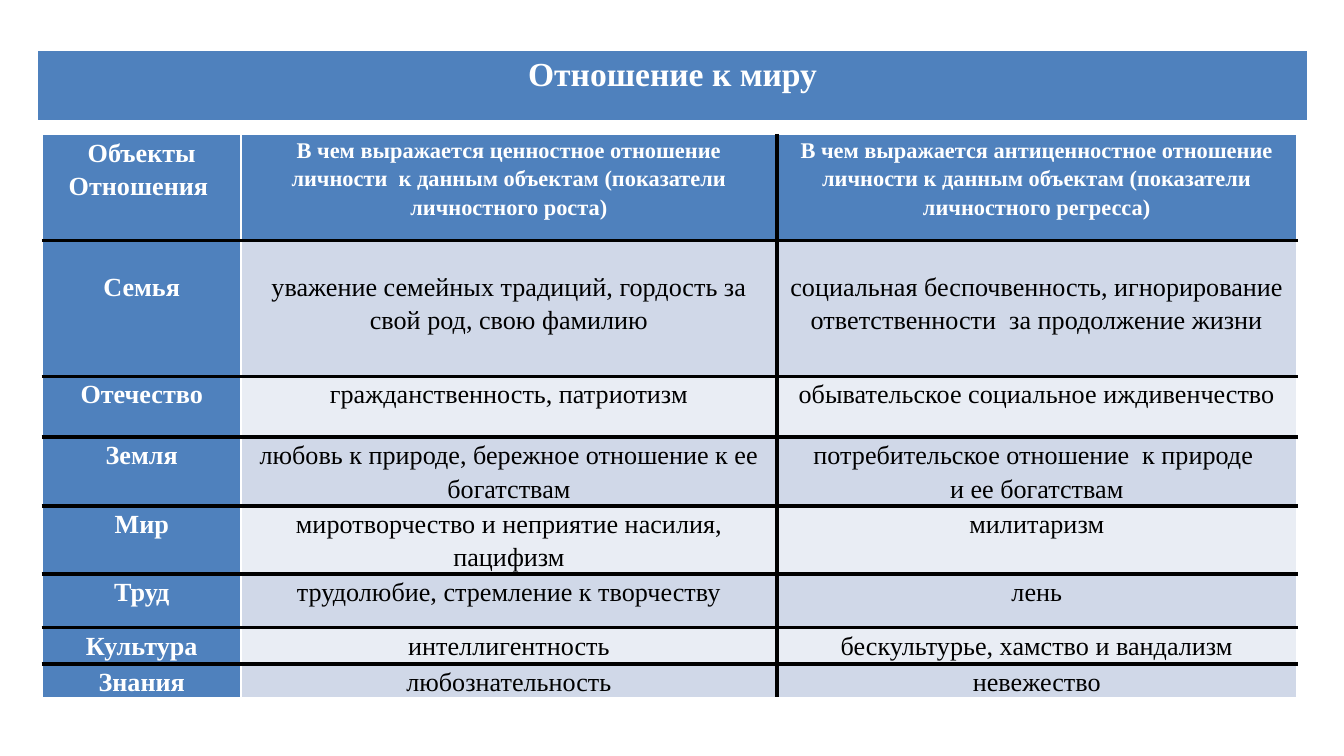
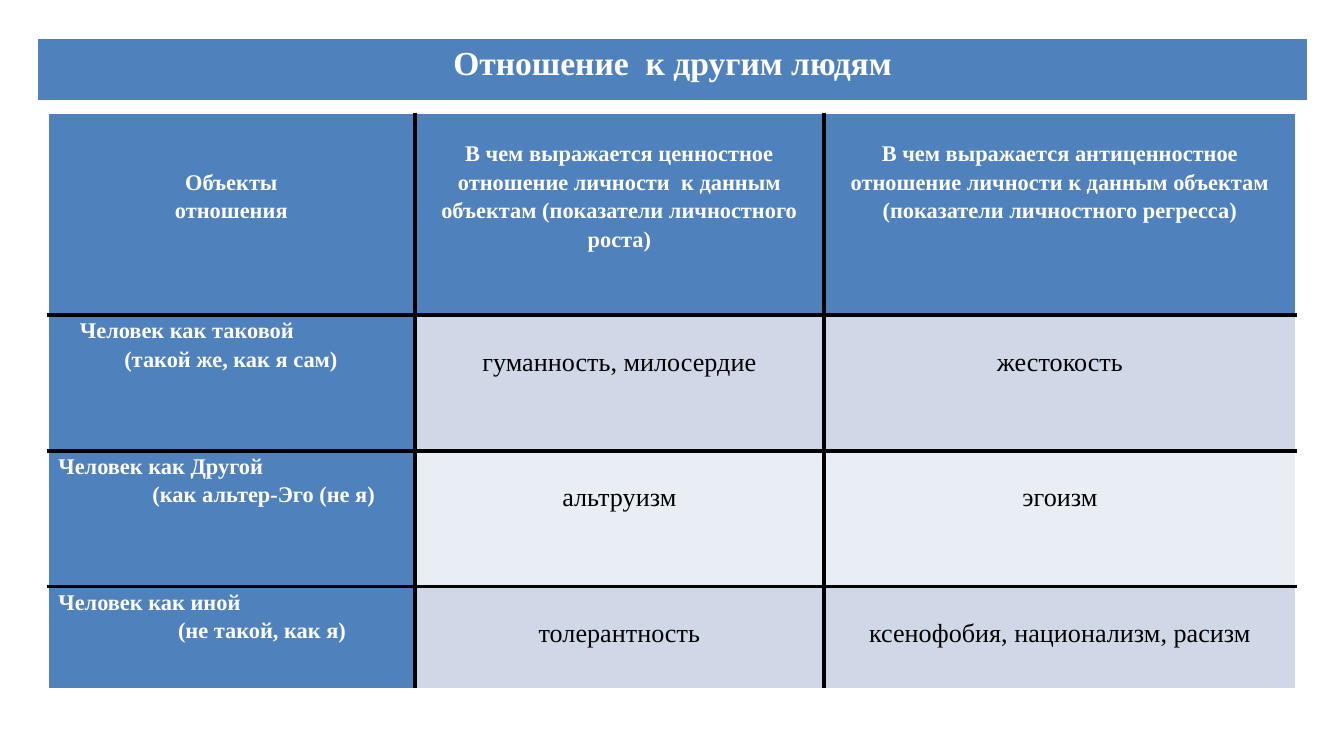
from dataclasses import dataclass

from lxml.etree import SubElement
from pptx import Presentation
from pptx.dml.color import RGBColor
from pptx.enum.text import PP_ALIGN
from pptx.oxml.ns import qn
from pptx.util import Emu, Inches, Pt

# Shared look
WIDTH, HEIGHT = Inches(10), Inches(5.625)
FONT = "Times New Roman"
BLUE, WHITE, BLACK = "4F81BD", "FFFFFF", "000000"
BANDS = ("D0D8E8", "E9EDF4")
THIN, THICK, BASE = (WHITE, 1), (BLACK, 2.25), (WHITE, 3)
SMALL, MEDIUM, LARGE = 12, 14, 18


@dataclass
class Entry:
    """Text of one cell: skip is the number of lines left free above it."""
    lines: tuple
    size: int = MEDIUM
    skip: int = 0
    indents: tuple = ()


def entry(*lines, **options):
    return Entry(lines, **options)


def color(value):
    return RGBColor.from_string(value)


def across(percent):
    return Emu(round(WIDTH * percent / 100))


def down(percent):
    return Emu(round(HEIGHT * percent / 100))


def add_span(para, text, size, ink, bold):
    span = para.add_run()
    span.text = text
    span.font.name = FONT
    span.font.size = Pt(size)
    span.font.bold = bold
    span.font.color.rgb = color(ink)


def fill_back(cell, fill):
    cell.fill.solid()
    cell.fill.fore_color.rgb = color(fill)


def set_borders(cell, **sides):
    """Draw the borders, which come before the fill in the cell properties."""
    properties = cell._tc.get_or_add_tcPr()
    for position, side in enumerate("LRTB"):
        ink, points = sides[side]
        line = SubElement(properties, qn(f"a:ln{side}"), w=str(Pt(points)))
        solid = SubElement(line, qn("a:solidFill"))
        SubElement(solid, qn("a:srgbClr"), val=ink)
        properties.insert(position, line)


def add_grid(page, left, top, columns, rows):
    shape = page.shapes.add_table(len(rows), len(columns), across(left), down(top),
                                  across(sum(columns)), down(sum(rows)))
    table = shape.table
    for column, share in zip(table.columns, columns):
        column.width = across(share)
    for row, share in zip(table.rows, rows):
        row.height = down(share)
    return table


def add_title(page, text, top, height):
    """Blue one-cell table across the page."""
    cell = add_grid(page, 2.8, top, (94.5,), (height,)).cell(0, 0)
    fill_back(cell, BLUE)
    set_borders(cell, L=THIN, R=THIN, T=THIN, B=BASE)
    para = cell.text_frame.paragraphs[0]
    para.alignment = PP_ALIGN.CENTER
    add_span(para, text, LARGE, WHITE, True)


def add_stepped_lines(para, item, ink, bold):
    """Two lines of one paragraph, each with its own indent."""
    first, second = (across(indent) for indent in item.indents)
    para.alignment = PP_ALIGN.LEFT
    properties = para._p.get_or_add_pPr()
    properties.set("marL", str(second))
    properties.set("indent", str(first - second))
    for number, line in enumerate(item.lines):
        if number:
            para.add_line_break()
        add_span(para, line, item.size, ink, bold)


def fill_text(cell, item, ink, bold, side_margin):
    cell.margin_left = cell.margin_right = Inches(side_margin)
    cell.margin_top = Pt(item.size * (1.29 * item.skip - 0.2)) if item.skip else 0
    cell.margin_bottom = 0
    frame = cell.text_frame
    if item.indents:
        frame.paragraphs[0].line_spacing = 1.15
        add_stepped_lines(frame.paragraphs[0], item, ink, bold)
        return
    for number, line in enumerate(item.lines):
        para = frame.add_paragraph() if number else frame.paragraphs[0]
        para.line_spacing = 1.15
        para.alignment = PP_ALIGN.CENTER
        add_span(para, line, item.size, ink, bold)


def add_relation_table(page, left, top, columns, rows, entries, rules, side_margin):
    """Blue head row and first column, banded body; rules are the vertical lines."""
    table = add_grid(page, left, top, columns, rows)
    verticals = (THIN, *rules, THIN)
    horizontals = (THIN, *[THICK] * (len(rows) - 1), THIN)
    for r, items in enumerate(entries):
        for c, item in enumerate(items):
            cell = table.cell(r, c)
            head = r == 0 or c == 0
            fill_back(cell, BLUE if head else BANDS[(r - 1) % 2])
            fill_text(cell, item, WHITE if head else BLACK, head, side_margin)
            set_borders(cell, L=verticals[c], R=verticals[c + 1],
                        T=horizontals[r], B=horizontals[r + 1])


def heads(skip):
    return [
        entry(f"В чем выражается {kind} к данным объектам "
              f"(показатели личностного {result})", size=SMALL, skip=skip)
        for kind, result in (("ценностное отношение личности ", "роста"),
                             ("антиценностное отношение личности", "регресса"))
    ]


def build_world(page):
    family = ("Семья",
              "уважение семейных традиций, гордость за свой род, свою фамилию",
              "социальная беспочвенность, игнорирование ответственности  "
              "за продолжение жизни")
    body = [
        ("Отечество", "гражданственность, патриотизм",
         "обывательское социальное иждивенчество"),
        ("Земля", "любовь к природе, бережное отношение к ее богатствам",
         ("потребительское отношение  к природе ", "и ее богатствам")),
        ("Мир", "миротворчество и неприятие насилия, пацифизм", "милитаризм"),
        ("Труд", "трудолюбие, стремление к творчеству", "лень"),
        ("Культура", "интеллигентность", "бескультурье, хамство и вандализм"),
        ("Знания", "любознательность", "невежество"),
    ]
    entries = [[entry("Объекты", "Отношения "), *heads(skip=0)],
               [entry(text, skip=1) for text in family]]
    for texts in body:
        entries.append([Entry(text if isinstance(text, tuple) else (text,))
                        for text in texts])
    add_relation_table(page, 3.15, 17.8, (14.8, 39.85, 38.7),
                       (14.04, 17.96, 8.05, 9.07, 9.07, 7.05, 4.8, 4.44),
                       entries, (THIN, THICK), 0.04)
    add_title(page, "Отношение к миру", 6.65, 9.6)


def build_people(page):
    body = [
        (("Человек как таковой", "(такой же, как я сам)"), (1.7, 5),
         "гуманность, милосердие", "жестокость"),
        (("Человек как Другой", "(как альтер-Эго (не я)"), (0.1, 7.1),
         "альтруизм", "эгоизм"),
        (("Человек как иной", "(не такой, как я)"), (0.1, 9),
         "толерантность", "ксенофобия, национализм, расизм"),
    ]
    entries = [[entry("Объекты", "отношения", size=SMALL, skip=2), *heads(skip=1)]]
    for lines, indents, *values in body:
        entries.append([Entry(lines, size=SMALL, indents=indents),
                        *[entry(value, skip=1) for value in values]])
    add_relation_table(page, 3.55, 15, (27.33, 30.42, 35.15),
                       (26.67, 17.96, 17.96, 13.51),
                       entries, (THICK, THICK), 0.07)
    add_title(page, "Отношение  к другим людям", 5.1, 8.4)


def main():
    deck = Presentation()
    deck.slide_width, deck.slide_height = WIDTH, HEIGHT
    blank = deck.slide_layouts[6]
    for build in (build_world, build_people):
        build(deck.slides.add_slide(blank))
    deck.save("out.pptx")


if __name__ == "__main__":
    main()
